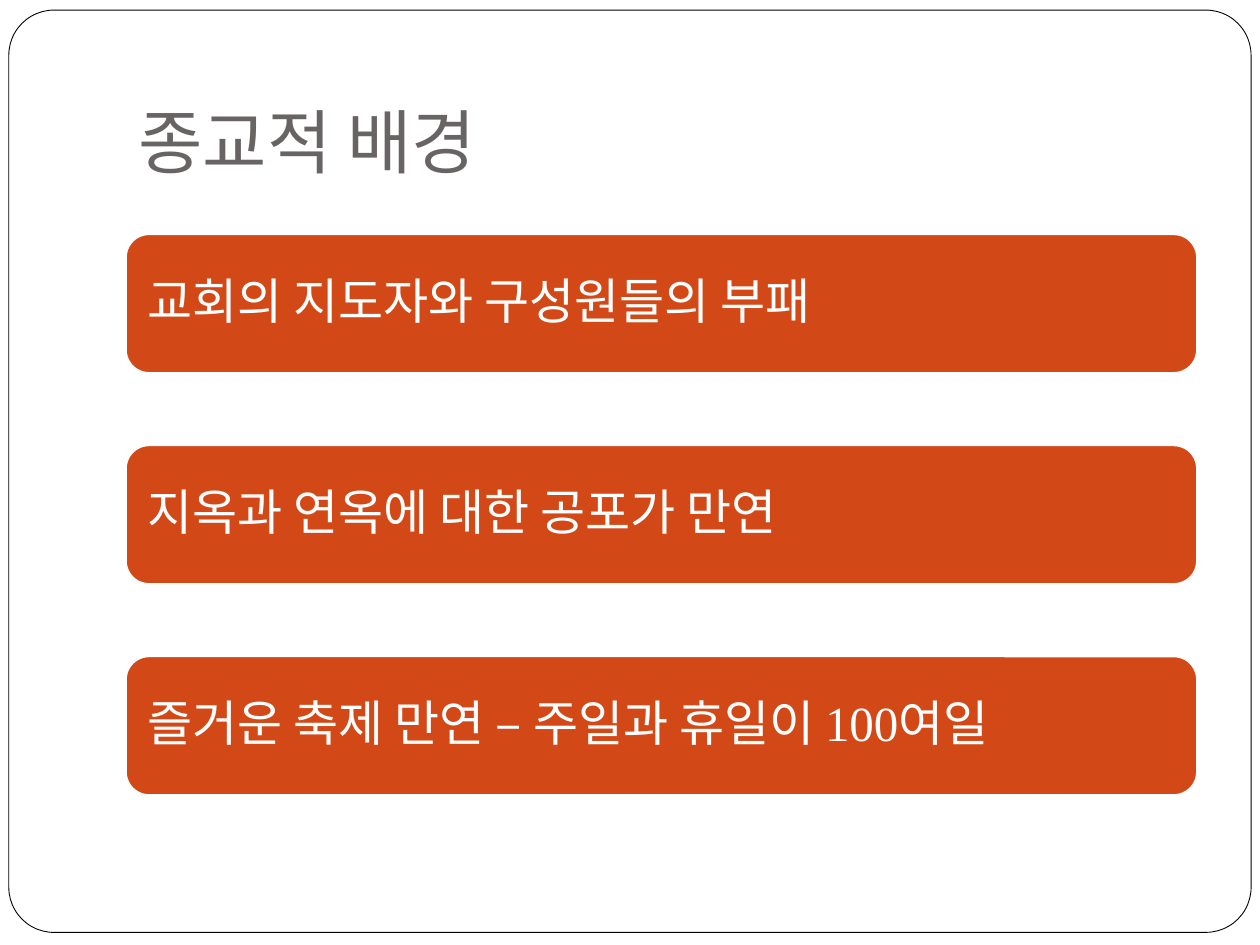
from pptx import Presentation
from pptx.dml.color import RGBColor
from pptx.enum.shapes import MSO_SHAPE
from pptx.enum.text import MSO_ANCHOR, MSO_AUTO_SIZE, PP_ALIGN
from pptx.util import Inches, Pt

COLORS = {"white": "FFFFFF", "black": "000000", "heading": "696464", "bar": "D34817"}
HEADING = "종교적 배경"
CAUSES = [
    "교회의 지도자와 구성원들의 부패",
    "지옥과 연옥에 대한 공포가 만연",
    "즐거운 축제 만연 – 주일과 휴일이 100여일",
]
HEADING_FRAME = {
    "margin_left": Inches(0.1), "margin_top": Inches(0.05),
    "margin_right": Inches(0.1), "margin_bottom": Inches(0.1),
    "vertical_anchor": MSO_ANCHOR.BOTTOM, "word_wrap": True,
    "auto_size": MSO_AUTO_SIZE.NONE,
}
BAR_FRAME = {
    "margin_left": Inches(0.12), "margin_top": Inches(0.12),
    "margin_right": Inches(0.12), "margin_bottom": Inches(0.12),
    "vertical_anchor": MSO_ANCHOR.MIDDLE, "word_wrap": True,
}
HEADING_PARAGRAPH = {"alignment": PP_ALIGN.LEFT}
BAR_PARAGRAPH = {"alignment": PP_ALIGN.LEFT, "line_spacing": 0.9, "space_after": Pt(9.8)}
HEADING_FONT = {"name": "Cabin", "size": Pt(40)}
BAR_FONT = {"name": "Times New Roman", "size": Pt(28)}


def color(key):
    """Return the named palette colour."""
    return RGBColor.from_string(COLORS[key])


def apply(target, values):
    """Set each attribute of target from a dict of values."""
    for attribute, value in values.items():
        setattr(target, attribute, value)


def write(holder, text, frame_format, paragraph_format, font_format, ink):
    """Write one formatted paragraph into a shape."""
    frame = holder.text_frame
    apply(frame, frame_format)
    paragraph = frame.paragraphs[0]
    apply(paragraph, paragraph_format)
    run = paragraph.add_run()
    run.text = text
    apply(run.font, font_format)
    run.font.color.rgb = color(ink)


def add_rounded(slide, left, top, width, height, fill, line, line_width):
    """Add a flat rounded rectangle in the given box."""
    rounded = slide.shapes.add_shape(MSO_SHAPE.ROUNDED_RECTANGLE, left, top, width, height)
    rounded.shadow.inherit = False
    rounded.fill.solid()
    rounded.fill.fore_color.rgb = color(fill)
    rounded.line.color.rgb = color(line)
    rounded.line.width = Pt(line_width)
    return rounded


def add_border(slide, left, top, width, height):
    """Place the page border behind everything else."""
    border = add_rounded(slide, left, top, width, height, "white", "black", 0.5)
    border.adjustments[0] = 0.049
    slide.shapes._spTree.insert(2, border._element)


def place_heading(slide, left, top, width, height):
    """Move and format the title placeholder."""
    heading = slide.shapes.title
    apply(heading, {"left": left, "top": top, "width": width, "height": height})
    write(heading, HEADING, HEADING_FRAME, HEADING_PARAGRAPH, HEADING_FONT, "heading")


def add_causes(slide, left, top, width, height):
    """Stack one bar per cause, evenly spread over the box."""
    bar_height = Inches(1.1)
    step = (height - bar_height) // (len(CAUSES) - 1)
    for index, cause in enumerate(CAUSES):
        bar = add_rounded(slide, left, top + index * step, width, bar_height, "bar", "white", 1)
        write(bar, cause, BAR_FRAME, BAR_PARAGRAPH, BAR_FONT, "white")


def main():
    """Build and save the slide."""
    deck = Presentation()
    deck.slide_width, deck.slide_height = Inches(10), Inches(7.5)
    slide = deck.slides.add_slide(deck.slide_layouts[5])
    add_border(slide, Inches(0.07), Inches(0.08), Inches(9.86), Inches(7.32))
    place_heading(slide, Inches(1), Inches(0.3), Inches(8.5), Inches(1.25))
    add_causes(slide, Inches(1), Inches(1.86), Inches(8.5), Inches(4.45))
    deck.save("out.pptx")


if __name__ == "__main__":
    main()
